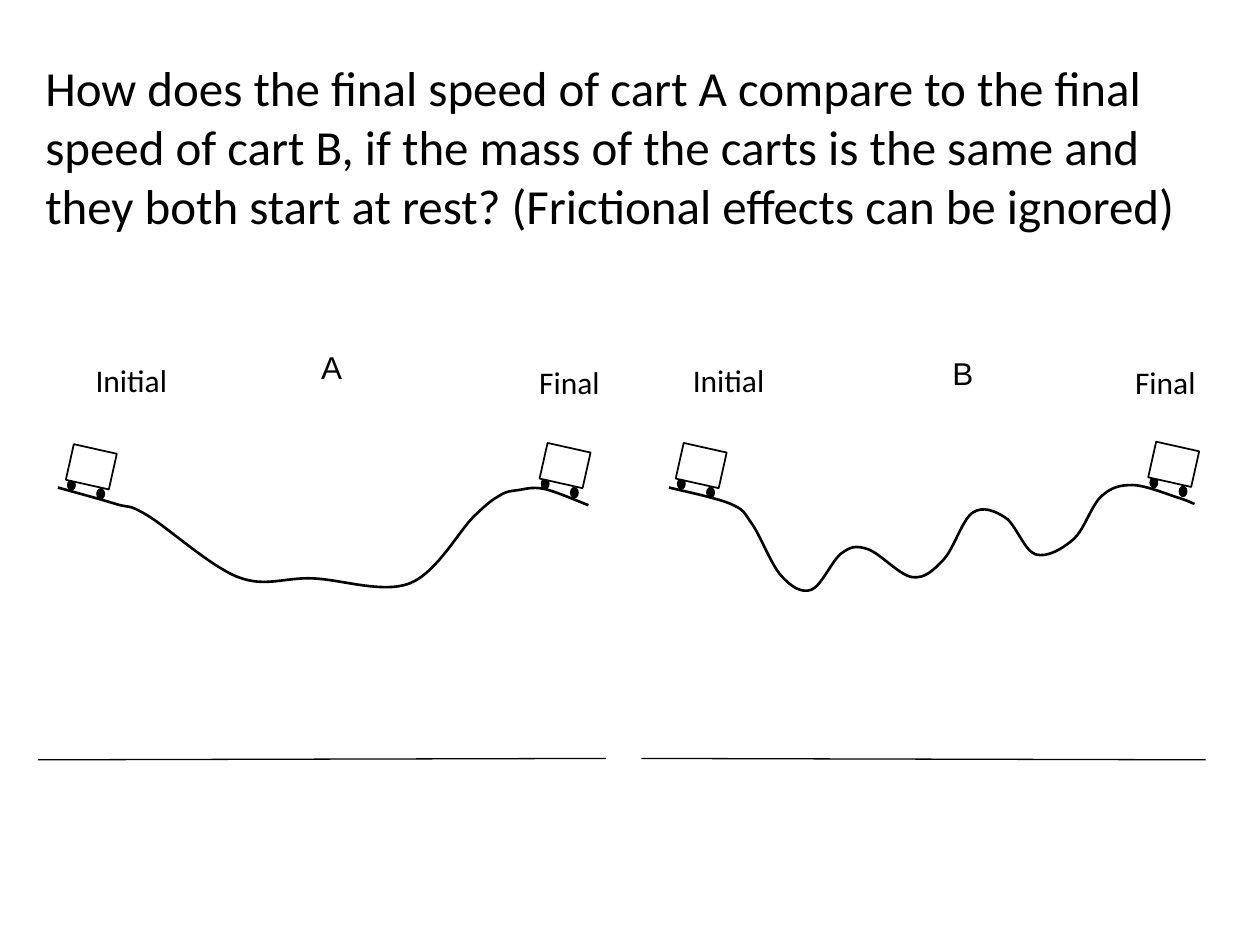
from typing import NamedTuple

from lxml.etree import SubElement
from pptx import Presentation
from pptx.dml.color import RGBColor
from pptx.enum.shapes import MSO_CONNECTOR, MSO_SHAPE
from pptx.enum.text import MSO_ANCHOR as Anchor, MSO_AUTO_SIZE as AutoSize, PP_ALIGN as Align
from pptx.oxml.ns import qn
from pptx.util import Pt

COLORS = {"ink": "000000", "cart": "FFFFFF"}
CART_TILT = 12.6
CART_SIZE = (25.2, 20.9)
WHEEL_SIZE = (4.3, 5.8)
WHEEL_OFFSETS = [(-0.9, 18), (15.8, 23)]
LABEL_HEIGHT = 28.8


class Label(NamedTuple):
    text: str
    left: float
    top: float
    width: float
    font: str = "Calibri"


class Track(NamedTuple):
    labels: list[Label]
    ground: tuple[float, float, float, float]
    carts: list[tuple[float, float]]
    rail: list[tuple[float, float]]


QUESTION = (
    "How does the final speed of cart A compare to the final speed of cart B, "
    "if the mass of the carts is the same and they both start at rest? "
    "(Frictional effects can be ignored)"
)

TRACKS = [
    Track(
        labels=[
            Label("A", 176.4, 195.1, 26.6, "Arial"),
            Label("Initial", 47.5, 203, 56.2),
            Label("Final", 301, 203.8, 49.7),
        ],
        ground=(346.3, 433.4, 21.6, 434.2),
        carts=[(39.6, 256.3), (310.3, 255.6)],
        rail=[
            (33.1, 278.6), (66.2, 288), (84.2, 294.5), (136.1, 329.8),
            (178.6, 330.5), (234, 333.4), (270.7, 295.2), (285.8, 283),
            (295.9, 280.1), (311, 279.4), (336.2, 288.7),
        ],
    ),
    Track(
        labels=[
            Label("B", 537.1, 198.7, 26.6, "Arial"),
            Label("Initial", 388.8, 203, 56.2),
            Label("Final", 641.5, 203.8, 49.7),
        ],
        ground=(689, 434.2, 366.5, 433.4),
        carts=[(388.1, 255.6), (658.1, 254.9)],
        rail=[
            (382.3, 278.6), (417.6, 288), (429.8, 299.5), (446.4, 329),
            (463.7, 337), (481, 316.1), (496.1, 313.9), (521.3, 329.8),
            (539.3, 319.7), (555.8, 293), (574.6, 295.9), (591.8, 316.8),
            (613.4, 308.2), (629.3, 283.7), (647.3, 277.2), (673.2, 284.4),
            (682.6, 288),
        ],
    ),
]


def color(name: str) -> RGBColor:
    return RGBColor.from_string(COLORS[name])


def write(frame, text: str, *, size: float, font: str, wrap: bool) -> None:
    frame.word_wrap = wrap
    frame.auto_size = AutoSize.NONE
    frame.vertical_anchor = Anchor.TOP
    paragraph = frame.paragraphs[0]
    paragraph.alignment = Align.LEFT
    run = paragraph.add_run()
    run.text = text
    run.font.size = Pt(size)
    run.font.name = font
    run.font.color.rgb = color("ink")


def outline(shape, width: float) -> None:
    shape.line.color.rgb = color("ink")
    shape.line.width = Pt(width)


def add_label(slide, label: Label) -> None:
    box = slide.shapes.add_textbox(
        Pt(label.left), Pt(label.top), Pt(label.width), Pt(LABEL_HEIGHT)
    )
    write(box.text_frame, label.text, size=18, font=label.font, wrap=False)


def add_solid(slide, kind, corner, size, fill: str, width: float):
    solid = slide.shapes.add_shape(kind, *map(Pt, (*corner, *size)))
    solid.shadow.inherit = False
    solid.fill.solid()
    solid.fill.fore_color.rgb = color(fill)
    outline(solid, width)
    return solid


def add_cart(slide, left: float, top: float) -> None:
    for dx, dy in WHEEL_OFFSETS:
        add_solid(slide, MSO_SHAPE.OVAL, (left + dx, top + dy), WHEEL_SIZE, "ink", 0.75)
    body = add_solid(slide, MSO_SHAPE.RECTANGLE, (left, top), CART_SIZE, "cart", 1)
    body.rotation = CART_TILT


def add_ground(slide, ends: tuple[float, float, float, float]) -> None:
    ground = slide.shapes.add_connector(MSO_CONNECTOR.STRAIGHT, *map(Pt, ends))
    outline(ground, 0.75)
    SubElement(ground._element.spPr, qn("a:effectLst"))


def spline_points(anchors: list[tuple[float, float]]) -> list[tuple[float, float]]:
    padded = [anchors[0], *anchors, anchors[-1]]
    points = []
    for before, start, end, after in zip(padded, padded[1:], padded[2:], padded[3:]):
        points += [
            tuple(s + (e - b) / 6 for b, s, e in zip(before, start, end)),
            tuple(e - (a - s) / 6 for s, e, a in zip(start, end, after)),
            end,
        ]
    return points


def add_rail(slide, anchors: list[tuple[float, float]]) -> None:
    builder = slide.shapes.build_freeform(*map(Pt, anchors[0]))
    builder.add_line_segments(
        [(Pt(x), Pt(y)) for x, y in spline_points(anchors)], close=False
    )
    rail = builder.convert_to_shape()
    rail.shadow.inherit = False
    rail.fill.background()
    outline(rail, 1.5)
    contour = next(rail._element.iter(qn("a:path")))
    segments = contour.findall(qn("a:lnTo"))
    for first in range(0, len(segments), 3):
        curve = SubElement(contour, qn("a:cubicBezTo"))
        for segment in segments[first:first + 3]:
            curve.append(segment[0])
            contour.remove(segment)


def add_question(slide) -> None:
    title = slide.shapes.title
    title.left, title.top, title.width, title.height = map(Pt, (18.7, 29.5, 683.3, 108.7))
    write(title.text_frame, QUESTION, size=28, font="Calibri", wrap=True)


def main() -> None:
    deck = Presentation()
    deck.slide_width, deck.slide_height = Pt(720), Pt(540)
    slide = deck.slides.add_slide(deck.slide_layouts[5])
    add_question(slide)
    for track in TRACKS:
        for label in track.labels:
            add_label(slide, label)
        add_ground(slide, track.ground)
        add_rail(slide, track.rail)
        for left, top in track.carts:
            add_cart(slide, left, top)
    deck.save("out.pptx")


if __name__ == "__main__":
    main()
